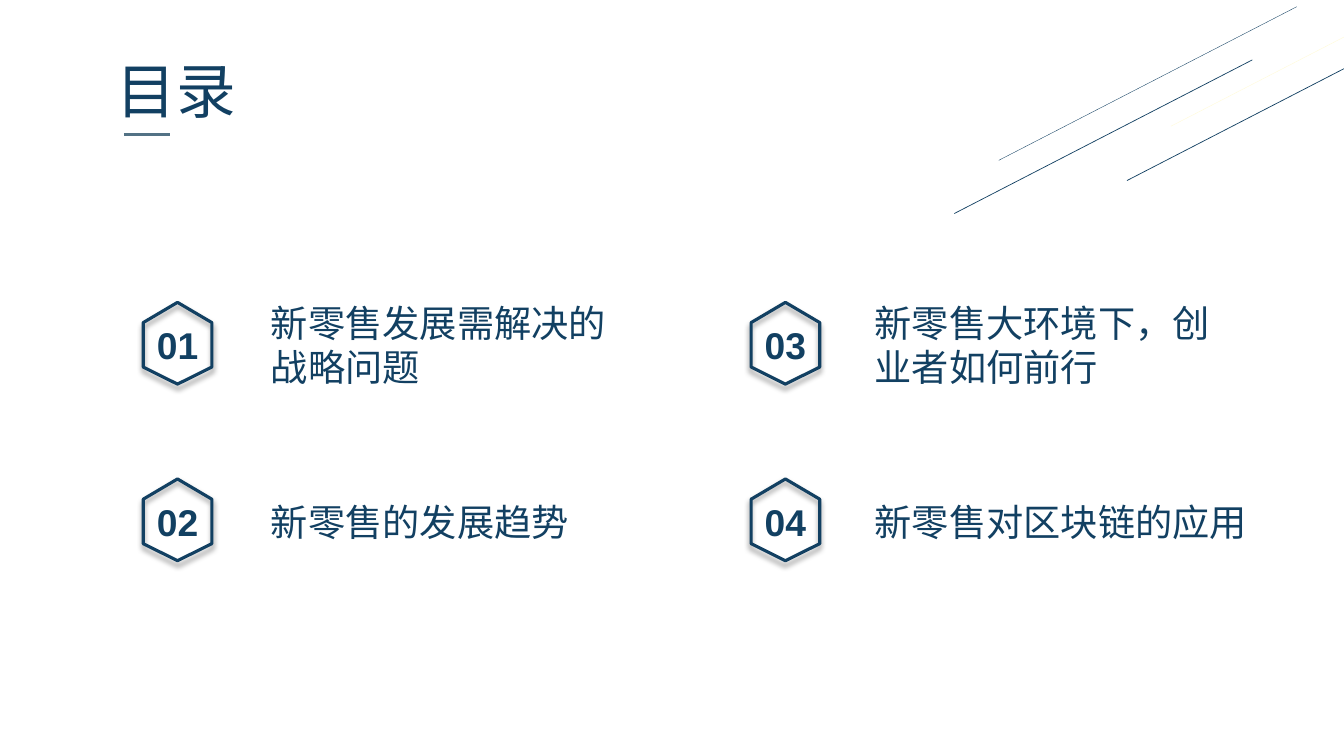
from dataclasses import dataclass

import lxml.etree
import pptx
import pptx.dml.color
import pptx.enum.shapes
import pptx.enum.text
import pptx.oxml.ns
import pptx.util

Cm = pptx.util.Cm
Pt = pptx.util.Pt
qn = pptx.oxml.ns.qn


@dataclass(frozen=True)
class Theme:
    navy: str = "124062"
    slate: str = "537285"
    pale: str = "FFFBD5"
    shadow: str = "000000"
    chinese_font: str = "Noto Sans CJK SC"
    number_font: str = "Arial"
    title_size: float = 42.6
    body_size: float = 26.6
    thick: float = 2.25
    thin: float = 0.5
    hairline: float = 0.25


THEME = Theme()
ENTRIES = [
    ("01", "新零售发展需解决的战略问题", 0, 0, 9.22, 2),
    ("02", "新零售的发展趋势", 0, 1, 9.22, 1),
    ("03", "新零售大环境下，创业者如何前行", 1, 0, 9.22, 2),
    ("04", "新零售对区块链的应用", 1, 1, 10.03, 1),
]


def rgb(color):
    return pptx.dml.color.RGBColor.from_string(color)


def add_text(shapes, text, left, top, width, height, size, font, bold=False, wrap=True, centred=False):
    box = shapes.add_textbox(Cm(left), Cm(top), Cm(width), Cm(height))
    frame = box.text_frame
    frame.word_wrap = wrap
    frame.auto_size = pptx.enum.text.MSO_AUTO_SIZE.SHAPE_TO_FIT_TEXT
    paragraph = frame.paragraphs[0]
    if centred:
        paragraph.alignment = pptx.enum.text.PP_ALIGN.CENTER
    run = paragraph.add_run()
    run.text = text
    run.font.size = Pt(size)
    run.font.bold = bold
    run.font.color.rgb = rgb(THEME.navy)
    run.font.name = font
    east_asian = lxml.etree.SubElement(run.font._element, qn("a:ea"))
    east_asian.set("typeface", font)


def add_line(shapes, left, top, run, rise, color, weight):
    line = shapes.add_connector(
        pptx.enum.shapes.MSO_CONNECTOR.STRAIGHT,
        Cm(left), Cm(top), Cm(left + run), Cm(top - rise),
    )
    line.line.color.rgb = rgb(color)
    line.line.width = Pt(weight)
    lxml.etree.SubElement(line._element.spPr, qn("a:effectLst"))


def add_soft_shadow(shape):
    shape.shadow.inherit = False
    effects = shape._element.spPr.find(qn("a:effectLst"))
    shadow = lxml.etree.SubElement(
        effects, qn("a:outerShdw"),
        blurRad=str(Pt(4)), dist=str(Pt(3)), dir="5400000", algn="t", rotWithShape="0",
    )
    color = lxml.etree.SubElement(shadow, qn("a:srgbClr"), val=THEME.shadow)
    lxml.etree.SubElement(color, qn("a:alpha"), val="40000")


def add_title(slide, left, top, width, height):
    add_text(slide.shapes, "目录", left, top, width, height, THEME.title_size, THEME.chinese_font)
    add_line(slide.shapes, left + 0.43, top + 2.14, 1.17, 0, THEME.slate, THEME.thick)


def add_corner_lines(slide, left, top):
    strokes = [
        (0, 0, THEME.navy, THEME.thin),
        (1.12, -1.34, THEME.navy, THEME.hairline),
        (4.35, -0.83, THEME.navy, THEME.thin),
        (5.46, -2.2, THEME.pale, THEME.hairline),
    ]
    for across, down, color, weight in strokes:
        add_line(slide.shapes, left + across, top + down, 7.51, 3.87, color, weight)


def add_badge(slide, number, left, top, width, height):
    group = slide.shapes.add_group_shape()
    middle, right, bottom = left + width / 2, left + width, top + height
    upper, lower = top + 0.51, top + 1.63
    corners = [(right, upper), (right, lower), (middle, bottom), (left, lower), (left, upper)]
    builder = group.shapes.build_freeform(Cm(middle), Cm(top), scale=1.0)
    builder.add_line_segments([(Cm(x), Cm(y)) for x, y in corners], close=True)
    hexagon = builder.convert_to_shape()
    hexagon.fill.background()
    hexagon.line.color.rgb = rgb(THEME.navy)
    hexagon.line.width = Pt(THEME.thick)
    add_soft_shadow(hexagon)
    add_text(
        group.shapes, number, left + 0.08, top + 0.38, width - 0.16, 1.4,
        THEME.body_size, THEME.number_font, bold=True, wrap=False, centred=True,
    )


def add_contents(slide, left, top):
    for number, text, column, row, width, lines in ENTRIES:
        badge_left = left + column * 15.32
        badge_top = top + row * 4.45
        add_badge(slide, number, badge_left, badge_top, 1.73, 2.06)
        text_left = left + 2.97 + column * 15.21
        height = 0.26 + lines * 1.14
        text_top = badge_top + 1.08 - height / 2
        add_text(
            slide.shapes, text, text_left, text_top, width, height,
            THEME.body_size, THEME.chinese_font,
        )


def main():
    presentation = pptx.Presentation()
    presentation.slide_width = Cm(33.87)
    presentation.slide_height = Cm(19.05)
    slide = presentation.slides.add_slide(presentation.slide_layouts[6])
    add_title(slide, 2.69, 1.24, 3.89, 2.08)
    add_corner_lines(slide, 24.05, 5.38)
    add_contents(slide, 3.61, 7.62)
    presentation.save("out.pptx")


if __name__ == "__main__":
    main()
